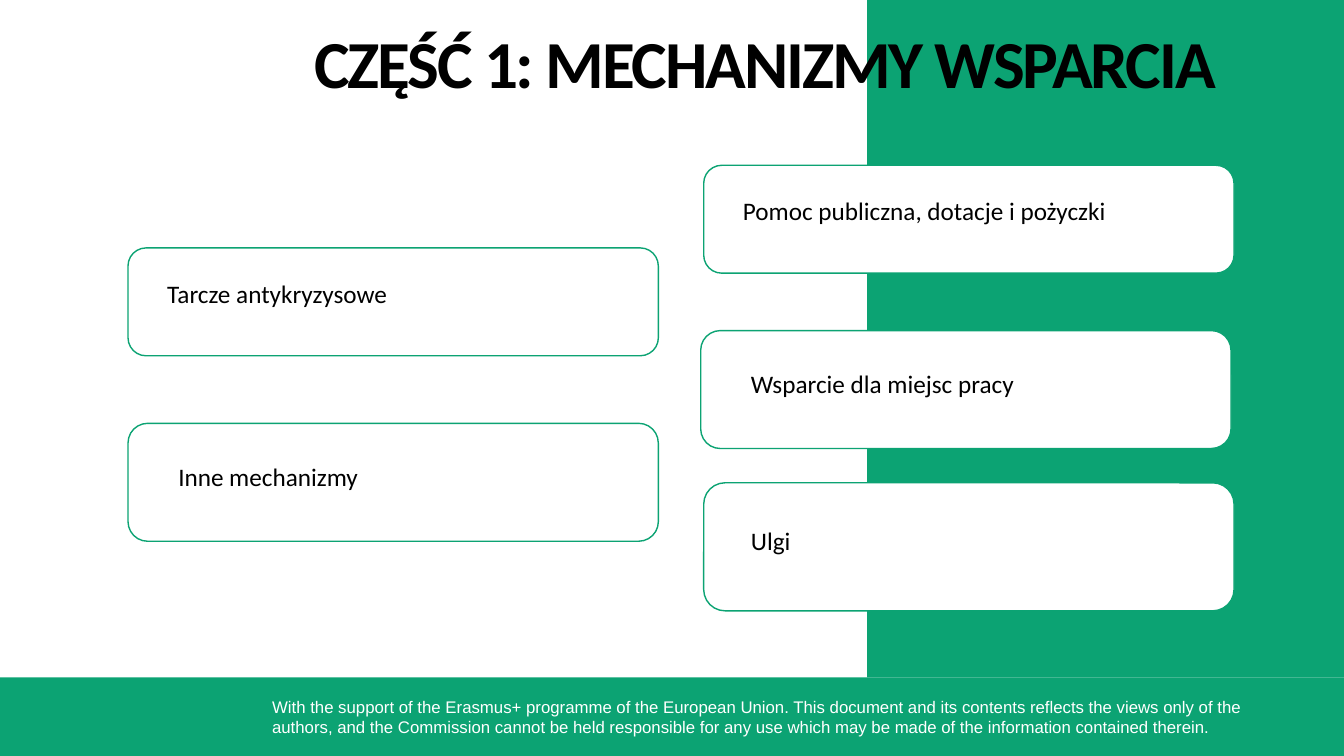
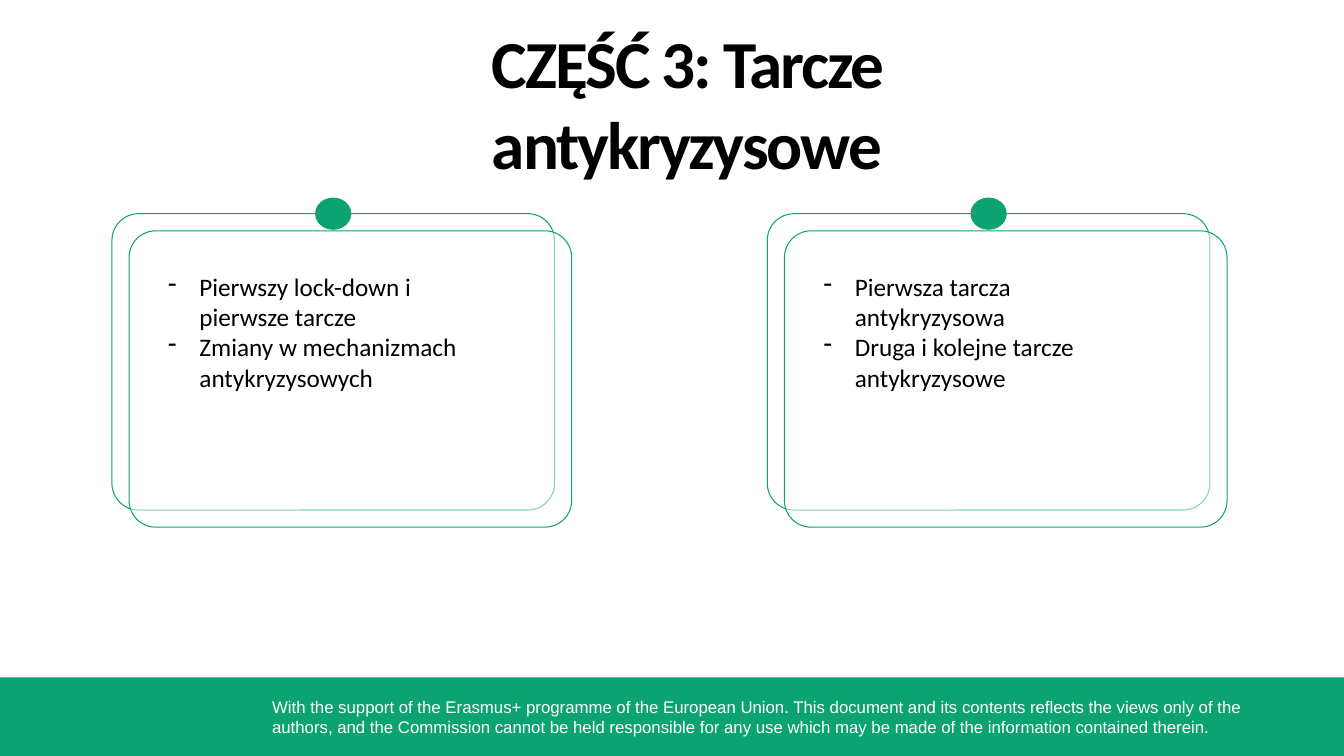
import pptx
import pptx.dml.color
import pptx.enum.shapes
import pptx.enum.text
import pptx.oxml.ns
import pptx.util
from lxml import etree
from pptx.util import Inches

GREEN, WHITE, BLACK = "0CA373", "FFFFFF", "000000"
SLIDE_WIDTH, SLIDE_HEIGHT = 13.33, 7.5
BAND_TOP = 6.72
FOOTER = (
    "With the support of the Erasmus+ programme of the European Union. "
    "This document and its contents reflects the views only of the authors, "
    "and the Commission cannot be held responsible for any use which may be "
    "made of the information contained therein."
)

MECHANISMS_TITLE = "CZĘŚĆ 1: MECHANIZMY WSPARCIA"
GREEN_PANEL_LEFT = 8.6
TILE_WIDTH = 5.26
# Label, tile left, top and height, then label offset from the tile's corner
MECHANISMS = [
    ("Pomoc publiczna, dotacje i pożyczki", 6.98, 1.64, 1.07, 0.29, 0.25),
    ("Wsparcie dla miejsc pracy", 6.95, 3.28, 1.17, 0.4, 0.32),
    ("Ulgi", 6.98, 4.79, 1.27, 0.37, 0.37),
    ("Tarcze antykryzysowe", 1.27, 2.46, 1.07, 0.29, 0.25),
    ("Inne mechanizmy", 1.27, 4.2, 1.17, 0.4, 0.33),
]

SHIELDS_TITLE = "CZĘŚĆ 3: Tarcze antykryzysowe"
SHIELD_CARDS = [
    ["Pierwszy lock-down i pierwsze tarcze",
     "Zmiany w mechanizmach antykryzysowych"],
    ["Pierwsza tarcza antykryzysowa",
     "Druga i kolejne tarcze antykryzysowe"],
]
CARD_LEFT, CARD_TOP, CARD_PITCH = 1.11, 2.12, 6.5
CARD_WIDTH, CARD_HEIGHT = 4.39, 2.94
CARD_SHIFT = 0.17
DOT_WIDTH, DOT_HEIGHT = 0.36, 0.32

SHAPES = pptx.enum.shapes.MSO_SHAPE
ALIGN = pptx.enum.text.PP_ALIGN


def color(value):
    return pptx.dml.color.RGBColor.from_string(value)


def add_shape(slide, kind, left, top, width, height, fill, line_width=None):
    """Add a filled shape, with a green outline if a line width is given."""
    shape = slide.shapes.add_shape(
        kind, Inches(left), Inches(top), Inches(width), Inches(height))
    shape.shadow.inherit = False
    shape.fill.solid()
    shape.fill.fore_color.rgb = color(fill)
    if line_width:
        shape.line.color.rgb = color(GREEN)
        shape.line.width = pptx.util.Pt(line_width)
    else:
        shape.line.fill.background()
    return shape


def make_half_transparent(shape):
    fill_color = shape.fill._xPr.find(".//" + pptx.oxml.ns.qn("a:srgbClr"))
    etree.SubElement(fill_color, pptx.oxml.ns.qn("a:alpha"), val="50000")


def add_dash(para):
    properties = para._p.get_or_add_pPr()
    indent = Inches(0.31)
    properties.set("marL", str(indent))
    properties.set("indent", str(-indent))
    etree.SubElement(properties, pptx.oxml.ns.qn("a:buChar"), char="-")


def add_text(slide, lines, left, top, width, height, size=18, font="Calibri",
             text_color=BLACK, dashed=False):
    box = slide.shapes.add_textbox(
        Inches(left), Inches(top), Inches(width), Inches(height))
    frame = box.text_frame
    frame.word_wrap = True
    frame.text = "\n".join(lines)
    for para in frame.paragraphs:
        if dashed:
            add_dash(para)
        para.font.size = pptx.util.Pt(size)
        para.font.name = font
        para.font.color.rgb = color(text_color)
    return frame


def add_title(slide, title, left, width, alignment):
    frame = add_text(slide, [title], left, 0.19, width, 0.82, size=48)
    frame.margin_left = frame.margin_right = frame.margin_bottom = 0
    frame.margin_top = Inches(0.02)
    para = frame.paragraphs[0]
    para.alignment = alignment
    para.font.bold = True
    para.runs[0].font._element.set("spc", "-150")


def add_slide(deck):
    """Add a blank slide with the shared green footer band."""
    slide = deck.slides.add_slide(deck.slide_layouts[6])
    add_shape(slide, SHAPES.RECTANGLE, 0, BAND_TOP, SLIDE_WIDTH,
              SLIDE_HEIGHT - BAND_TOP, GREEN)
    add_text(slide, [FOOTER], 2.6, 6.86, 10.42, 0.5, size=12, font="Arial",
             text_color=WHITE)
    return slide


def build_mechanisms(deck):
    slide = add_slide(deck)
    add_shape(slide, SHAPES.RECTANGLE, GREEN_PANEL_LEFT, 0,
              SLIDE_WIDTH - GREEN_PANEL_LEFT, BAND_TOP, GREEN)
    add_title(slide, MECHANISMS_TITLE, 2.64, 9.9, ALIGN.CENTER)
    for label, left, top, height, label_x, label_y in MECHANISMS:
        add_shape(slide, SHAPES.ROUNDED_RECTANGLE, left, top, TILE_WIDTH,
                  height, WHITE, line_width=1)
        add_text(slide, [label], left + label_x, top + label_y, 3.87, 0.4)


def build_shields(deck):
    slide = add_slide(deck)
    add_title(slide, SHIELDS_TITLE, 4.88, 7.83, ALIGN.LEFT)
    for column, lines in enumerate(SHIELD_CARDS):
        left = CARD_LEFT + column * CARD_PITCH
        for shift in (0, CARD_SHIFT):
            card = add_shape(slide, SHAPES.ROUNDED_RECTANGLE, left + shift,
                             CARD_TOP + shift, CARD_WIDTH, CARD_HEIGHT, WHITE,
                             line_width=0.75)
            card.adjustments[0] = 0.09
            make_half_transparent(card)
        add_shape(slide, SHAPES.OVAL, left + (CARD_WIDTH - DOT_WIDTH) / 2,
                  CARD_TOP - DOT_HEIGHT / 2, DOT_WIDTH, DOT_HEIGHT, GREEN)
        add_text(slide, lines, left + 0.46, CARD_TOP + 0.52, 3.47, 1.62,
                 dashed=True)


def main():
    deck = pptx.Presentation()
    deck.slide_width = Inches(SLIDE_WIDTH)
    deck.slide_height = Inches(SLIDE_HEIGHT)
    build_mechanisms(deck)
    build_shields(deck)
    deck.save("out.pptx")


if __name__ == "__main__":
    main()
